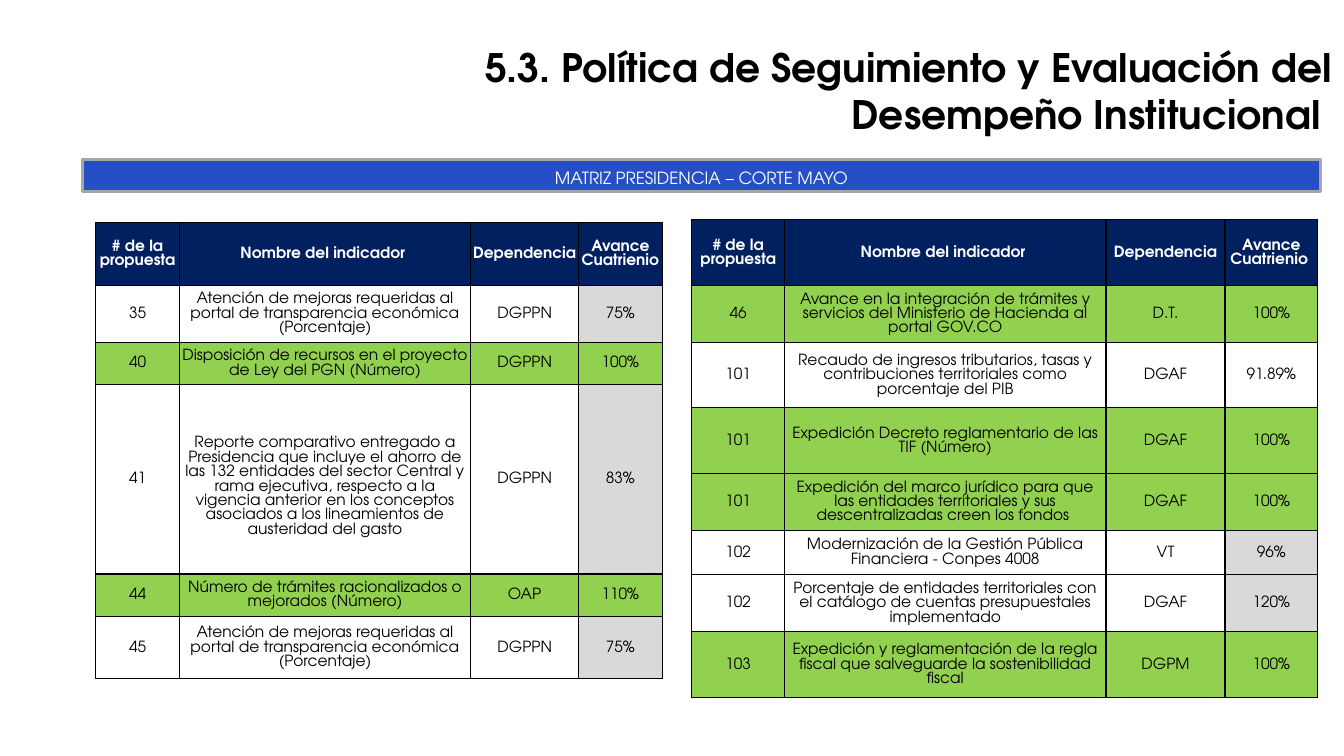
from dataclasses import dataclass

from lxml import etree
from pptx import Presentation
from pptx.dml.color import RGBColor
from pptx.enum.shapes import MSO_SHAPE
from pptx.enum.text import MSO_ANCHOR, MSO_AUTO_SIZE, PP_ALIGN
from pptx.oxml.ns import qn
from pptx.util import Pt

RECTANGLE = MSO_SHAPE.RECTANGLE
TOP, MIDDLE = MSO_ANCHOR.TOP, MSO_ANCHOR.MIDDLE
CENTER, RIGHT = PP_ALIGN.CENTER, PP_ALIGN.RIGHT
NO_FIT, GROW = MSO_AUTO_SIZE.NONE, MSO_AUTO_SIZE.SHAPE_TO_FIT_TEXT

FONT = "TeX Gyre Adventor"
BLACK, WHITE, NAVY, BLUE = "000000", "FFFFFF", "002060", "264FC6"
GREEN, GRAY, FRAME_GRAY = "92D050", "D9D9D9", "A6A6A6"
HEADINGS = ("# de la propuesta", "Nombre del indicador ",
            "Dependencia", "Avance Cuatrienio ")
CELL_INSET = 0.7
THREE_LINES = 40.7


@dataclass(frozen=True)
class Indicator:
    proposal: str
    name: str
    office: str
    progress: str
    height: float
    fill: str | None = None
    progress_fill: str | None = None
    top_inset: float = CELL_INSET


@dataclass(frozen=True)
class Matrix:
    left: float
    top: float
    width: float
    columns: tuple[float, ...]
    header_height: float
    indicators: tuple[Indicator, ...]

    @property
    def height(self) -> float:
        return self.header_height + sum(item.height for item in self.indicators)


IMPROVEMENTS = ("Atención de mejoras requeridas al portal de transparencia "
                "económica (Porcentaje)")

MATRICES = (
    Matrix(68.4, 159.1, 404.6, (59.8, 208.1, 77, 59.8), 44.6, (
        Indicator("35", IMPROVEMENTS, "DGPPN", "75%", THREE_LINES, None, GRAY),
        Indicator("40", "Disposición de recursos en el proyecto de Ley del PGN (Número)",
                  "DGPPN", "100%", 30.2, GREEN, GREEN),
        Indicator("41", "Reporte comparativo entregado a Presidencia que incluye el "
                  "ahorro de las 132 entidades del sector Central y rama ejecutiva, "
                  "respecto a la vigencia anterior en los conceptos asociados a los "
                  "lineamientos de austeridad del gasto",
                  "DGPPN", "83%", 135.4, None, GRAY, 11),
        Indicator("44", "Número de trámites racionalizados o mejorados (Número)",
                  "OAP", "110%", 30.2, GREEN, GREEN),
        Indicator("45", IMPROVEMENTS, "DGPPN", "75%", 44.6, None, GRAY),
    )),
    Matrix(494.2, 157, 447.1, (66.2, 229.7, 85, 66.2), 46.8, (
        Indicator("46", "Avance en la integración de trámites y servicios del "
                  "Ministerio de Hacienda al portal GOV.CO",
                  "D.T.", "100%", THREE_LINES, GREEN, GREEN),
        Indicator("101", "Recaudo de ingresos tributarios, tasas y contribuciones "
                  "territoriales como porcentaje del PIB", "DGAF", "91.89%", 46.8),
        Indicator("101", "Expedición Decreto reglamentario de las TIF (Número)",
                  "DGAF", "100%", 46.8, GREEN, GREEN),
        Indicator("101", "Expedición del marco jurídico para que las entidades "
                  "territoriales y sus descentralizadas creen los fondos ",
                  "DGAF", "100%", THREE_LINES, GREEN, GREEN),
        Indicator("102", "Modernización de la Gestión Pública Financiera - Conpes 4008",
                  "VT", "96%", 31.7, None, GRAY),
        Indicator("102", "Porcentaje de entidades territoriales con el catálogo de "
                  "cuentas presupuestales implementado",
                  "DGAF", "120%", THREE_LINES, None, GRAY),
        Indicator("103", "Expedición y reglamentación de la regla fiscal que "
                  "salveguarde la sostenibilidad fiscal",
                  "DGPM", "100%", 46.8, GREEN, GREEN),
    )),
)


def color(value: str) -> RGBColor:
    return RGBColor.from_string(value)


def write(frame, text: str, size: float, ink: str, bold: bool, align) -> None:
    frame.text = text
    para = frame.paragraphs[0]
    para.alignment = align
    para.font.name = FONT
    para.font.size = Pt(size)
    para.font.bold = bold
    para.font.color.rgb = color(ink)


def add_borders(cell) -> None:
    properties = cell._tc.get_or_add_tcPr()
    for side in ("a:lnL", "a:lnR", "a:lnT", "a:lnB"):
        line = etree.SubElement(properties, qn(side), w=str(Pt(1)))
        fill = etree.SubElement(line, qn("a:solidFill"))
        etree.SubElement(fill, qn("a:srgbClr"), val=BLACK)


def fill_cell(cell, text: str, fill: str | None, ink: str = BLACK,
              bold: bool = False, top_inset: float = CELL_INSET) -> None:
    write(cell.text_frame, text, 11, ink, bold, CENTER)
    cell.vertical_anchor = MIDDLE
    cell.margin_left = cell.margin_right = Pt(CELL_INSET)
    cell.margin_top, cell.margin_bottom = Pt(top_inset), Pt(0)
    add_borders(cell)
    if fill:
        cell.fill.solid()
        cell.fill.fore_color.rgb = color(fill)
    else:
        cell.fill.background()


def add_matrix(page, matrix: Matrix) -> None:
    frame = page.shapes.add_table(
        len(matrix.indicators) + 1, len(HEADINGS), Pt(matrix.left),
        Pt(matrix.top), Pt(matrix.width), Pt(matrix.height))
    table = frame.table
    table.first_row = table.horz_banding = False
    for column, width in zip(table.columns, matrix.columns):
        column.width = Pt(width)
    table.rows[0].height = Pt(matrix.header_height)
    for position, heading in enumerate(HEADINGS):
        fill_cell(table.cell(0, position), heading, NAVY, WHITE, True)
    for number, item in enumerate(matrix.indicators, 1):
        table.rows[number].height = Pt(item.height)
        fill_cell(table.cell(number, 0), item.proposal, item.fill)
        fill_cell(table.cell(number, 1), item.name, item.fill, top_inset=item.top_inset)
        fill_cell(table.cell(number, 2), item.office, item.fill)
        fill_cell(table.cell(number, 3), item.progress, item.progress_fill)


def add_banner(page) -> None:
    banner = page.shapes.add_shape(RECTANGLE, Pt(59), Pt(114.2), Pt(884.2), Pt(22.3))
    banner.shadow.inherit = False
    banner.fill.solid()
    banner.fill.fore_color.rgb = color(BLUE)
    banner.line.color.rgb = color(FRAME_GRAY)
    banner.line.width = Pt(2.25)
    frame = banner.text_frame
    write(frame, "MATRIZ PRESIDENCIA – CORTE MAYO", 12, WHITE, False, CENTER)
    frame.paragraphs[0].line_spacing = 1.15
    frame.word_wrap = True
    frame.vertical_anchor = TOP
    frame.auto_size = GROW


def set_title(page) -> None:
    title = page.shapes.title
    title.left, title.top = Pt(179.3), Pt(45)
    title.width, title.height = Pt(779), Pt(38.9)
    frame = title.text_frame
    write(frame, "5.3. Política de Seguimiento y Evaluación del "
          "Desempeño Institucional ", 28, BLACK, True, RIGHT)
    frame.word_wrap = True
    frame.vertical_anchor = MIDDLE
    frame.auto_size = NO_FIT


def main() -> None:
    deck = Presentation()
    deck.slide_width, deck.slide_height = Pt(960), Pt(540)
    page = deck.slides.add_slide(deck.slide_layouts.get_by_name("Title Only"))
    set_title(page)
    for matrix in MATRICES:
        add_matrix(page, matrix)
    add_banner(page)
    deck.save("out.pptx")


if __name__ == "__main__":
    main()
